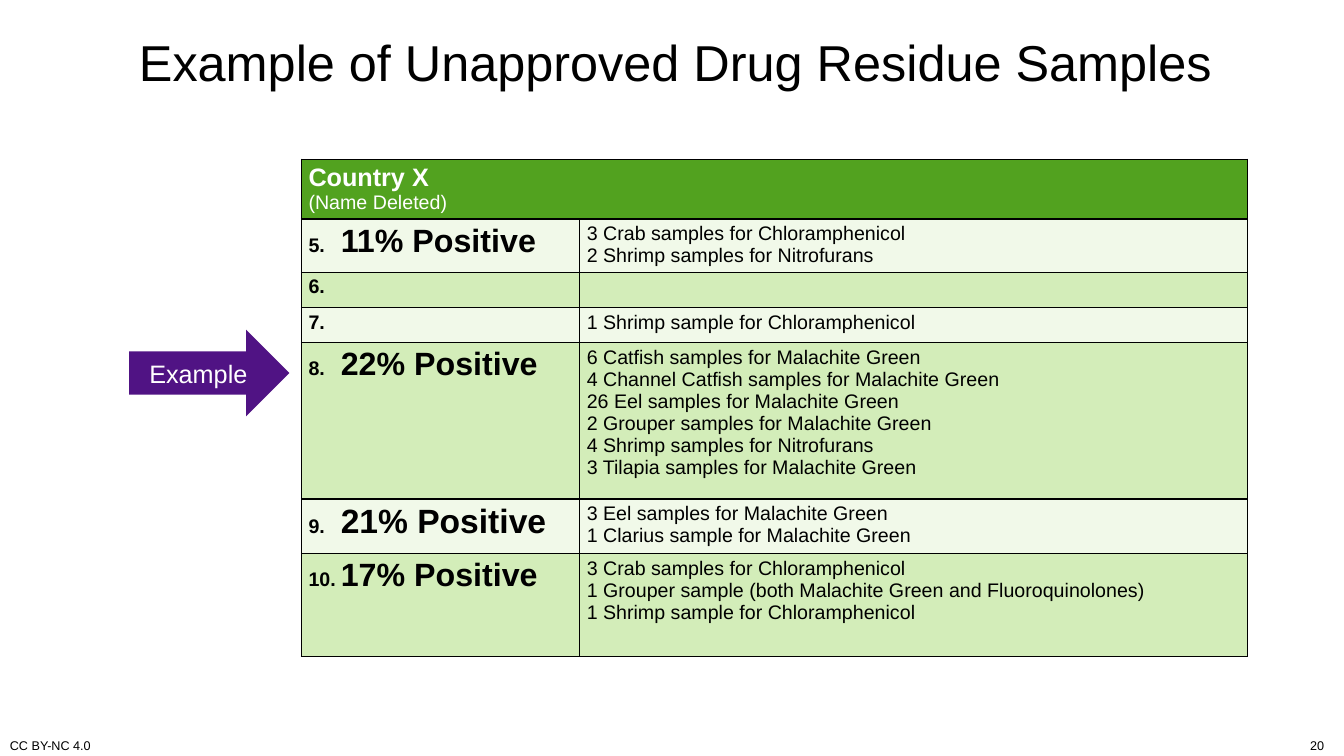
from lxml import etree
from pptx import Presentation
from pptx.dml.color import RGBColor
from pptx.enum.shapes import MSO_SHAPE
from pptx.enum.text import MSO_ANCHOR, PP_ALIGN
from pptx.oxml.ns import qn
from pptx.util import Inches, Pt

BLACK = RGBColor(0, 0, 0)
WHITE = RGBColor(0xFF, 0xFF, 0xFF)
HEADER_GREEN = RGBColor(0x52, 0xA2, 0x1F)
ROW_GREEN = RGBColor(0xD3, 0xED, 0xB9)
PURPLE = RGBColor(0x50, 0x13, 0x84)
LEFT, CENTER, RIGHT = PP_ALIGN.LEFT, PP_ALIGN.CENTER, PP_ALIGN.RIGHT
MIDDLE, BOTTOM = MSO_ANCHOR.MIDDLE, MSO_ANCHOR.BOTTOM

COLUMN_WIDTHS = [2.76, 6.62]
ROW_HEIGHTS = [0.58, 0.52, 0.35, 0.35, 1.55, 0.54, 1.02]
# number, share of positives, size of the share, samples
ROWS = [
    ("5.", "11% Positive", 23, ["3 Crab samples for Chloramphenicol",
                                "2 Shrimp samples for Nitrofurans"]),
    ("6.", "", 14, [""]),
    ("7.", "", 14, ["1 Shrimp sample for Chloramphenicol"]),
    ("8.", "22% Positive", 23, ["6 Catfish samples for Malachite Green",
                                "4 Channel Catfish samples for Malachite Green",
                                "26 Eel samples for Malachite Green",
                                "2 Grouper samples for Malachite Green",
                                "4 Shrimp samples for Nitrofurans",
                                "3 Tilapia samples for Malachite Green"]),
    ("9.", "21% Positive", 24, ["3 Eel samples for Malachite Green",
                                "1 Clarius sample for Malachite Green"]),
    ("10.", "17% Positive", 23, ["3 Crab samples for Chloramphenicol",
                                 "1 Grouper sample (both Malachite Green and Fluoroquinolones)",
                                 "1 Shrimp sample for Chloramphenicol"]),
]


def write_line(frame, text, size, color=BLACK, bold=False, align=LEFT):
    """Fill the frame's empty first paragraph, or add one, and return it."""
    para = frame.paragraphs[-1]
    if para.runs:
        para = frame.add_paragraph()
    para.alignment = align
    if text:
        para.add_run().text = text
    font = para.font
    font.name, font.size, font.bold = "Arial", Pt(size), bold
    font.color.rgb = color
    return para


def style_cell(cell, color, opacity=100):
    """Set the margins, black borders and fill of a table cell."""
    cell.margin_left = cell.margin_right = Inches(0.07)
    cell.margin_top, cell.margin_bottom = Inches(0.04), Inches(0.02)
    properties = cell._tc.get_or_add_tcPr()
    for side in ("lnL", "lnR", "lnT", "lnB"):
        line = etree.SubElement(properties, qn(f"a:{side}"), w=str(Pt(1)))
        solid = etree.SubElement(line, qn("a:solidFill"))
        etree.SubElement(solid, qn("a:srgbClr"), val=str(BLACK))
    cell.fill.solid()
    cell.fill.fore_color.rgb = color
    if opacity < 100:
        fill_color = properties.find(qn("a:solidFill"))[0]
        etree.SubElement(fill_color, qn("a:alpha"), val=str(opacity * 1000))


deck = Presentation()
deck.slide_width, deck.slide_height = Inches(13.33), Inches(7.5)
page = deck.slides.add_slide(deck.slide_layouts[6])

# Title and footer
for text, left, top, width, height, size, align, anchor in [
    ("Example of Unapproved Drug Residue Samples", 1.28, 0, 11.54, 1.21, 36, LEFT, MIDDLE),
    ("CC BY-NC 4.0", 0, 7.31, 2.77, 0.21, 9, LEFT, BOTTOM),
    ("20", 10.12, 7.29, 3.11, 0.23, 9, RIGHT, BOTTOM),
]:
    box = page.shapes.add_textbox(Inches(left), Inches(top), Inches(width), Inches(height))
    box.text_frame.word_wrap = True
    box.text_frame.vertical_anchor = anchor
    write_line(box.text_frame, text, size, align=align)

# Table
table = page.shapes.add_table(
    len(ROW_HEIGHTS), len(COLUMN_WIDTHS), Inches(2.99), Inches(1.58),
    Inches(sum(COLUMN_WIDTHS)), Inches(sum(ROW_HEIGHTS))).table
for column, width in zip(table.columns, COLUMN_WIDTHS):
    column.width = Inches(width)
for row, height in zip(table.rows, ROW_HEIGHTS):
    row.height = Inches(height)

header = table.cell(0, 0)
header.merge(table.cell(0, 1))
for cell in table.rows[0].cells:
    style_cell(cell, HEADER_GREEN)
write_line(header.text_frame, "Country X", 18, WHITE, bold=True)
write_line(header.text_frame, "(Name Deleted)", 14, WHITE)

for index, (number, share, share_size, samples) in enumerate(ROWS, start=1):
    number_cell, sample_cell = table.rows[index].cells
    for cell in (number_cell, sample_cell):
        style_cell(cell, ROW_GREEN, opacity=30 if index % 2 else 100)
    para = number_cell.text_frame.paragraphs[0]
    if share:
        tabs = etree.SubElement(para._p.get_or_add_pPr(), qn("a:tabLst"))
        etree.SubElement(tabs, qn("a:tab"), pos=str(Inches(0.32)), algn="l")
    write_line(number_cell.text_frame, number, 14, bold=True)
    if share:
        span = para.add_run()
        span.text = "\t" + share
        span.font.size = Pt(share_size)
    for sample in samples:
        write_line(sample_cell.text_frame, sample, 14)

# Arrow
arrow = page.shapes.add_shape(
    MSO_SHAPE.RIGHT_ARROW, Inches(1.28), Inches(3.27), Inches(1.59), Inches(0.86))
arrow.shadow.inherit = False
arrow.fill.solid()
arrow.fill.fore_color.rgb = PURPLE
arrow.line.fill.background()
arrow.text_frame.vertical_anchor = MIDDLE
write_line(arrow.text_frame, "Example", 18, WHITE, align=CENTER)

deck.save("out.pptx")
